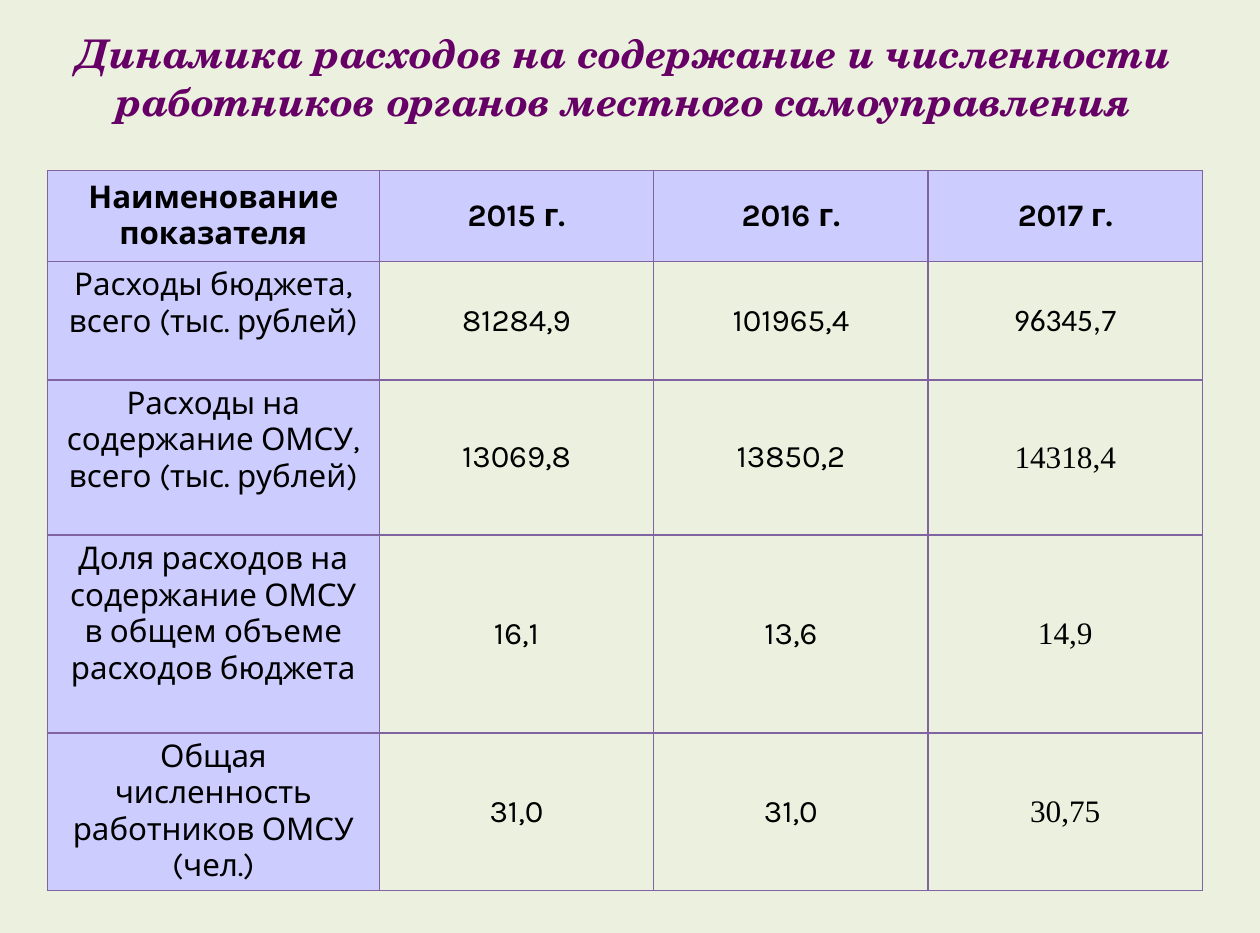
from pptx import Presentation
from pptx.dml.color import RGBColor
from pptx.enum import text
from pptx.oxml import parse_xml
from pptx.oxml import ns
from pptx.util import Pt

HEADING = "Динамика расходов на содержание и численности работников органов местного самоуправления"
INDICATORS = [
    ("Наименование показателя", "2015 г.", "2016 г.", "2017 г."),
    ("Расходы бюджета, всего (тыс. рублей)", "81284,9", "101965,4", "96345,7"),
    ("Расходы на содержание ОМСУ, всего (тыс. рублей)", "13069,8", "13850,2", "14318,4"),
    ("Доля расходов на содержание ОМСУ в общем объеме расходов бюджета", "16,1", "13,6", "14,9"),
    ("Общая численность работников ОМСУ (чел.)", "31,0", "31,0", "30,75"),
]
COLUMN_WIDTHS = [201.6, 166.7, 166.7, 166.7]
ROW_HEIGHTS = [55.3, 72, 94.3, 120.2, 88.6]
LAST_YEAR_FONTS = ["Karla", "Calibri"] + ["Times New Roman"] * 3
PAPER, LILAC, BORDER, PLUM, BLACK = "EBF1DE", "CCCCFF", "8064A2", "660066", "000000"


def color(value):
    return RGBColor.from_string(value)


def style(paragraph, font_name, size, font_color, bold, italic=False):
    paragraph.alignment = text.PP_ALIGN.CENTER
    font = paragraph.font
    font.name, font.size = font_name, Pt(size)
    font.bold, font.italic = bold, italic
    font.color.rgb = color(font_color)


def add_borders(cell):
    properties = cell._tc.get_or_add_tcPr()
    for position, side in enumerate(("lnL", "lnR", "lnT", "lnB")):
        properties.insert(position, parse_xml(
            f'<a:{side} {ns.nsdecls("a")} w="{Pt(1)}"><a:solidFill>'
            f'<a:srgbClr val="{BORDER}"/></a:solidFill></a:{side}>'))


deck = Presentation()
deck.slide_width, deck.slide_height = Pt(765.38), Pt(567)
slide = deck.slides.add_slide(deck.slide_layouts[5])
slide.background.fill.solid()
slide.background.fill.fore_color.rgb = color(PAPER)

heading = slide.shapes.title
heading.left, heading.top, heading.width, heading.height = Pt(34.6), Pt(13.4), Pt(689.2), Pt(66.2)
heading.text_frame.text = HEADING
heading.text_frame.vertical_anchor = text.MSO_ANCHOR.MIDDLE
style(heading.text_frame.paragraphs[0], "TeX Gyre Schola", 24, PLUM, True, True)

indicators = slide.shapes.add_table(
    len(INDICATORS), len(COLUMN_WIDTHS), Pt(28.8), Pt(103.6),
    Pt(sum(COLUMN_WIDTHS)), Pt(sum(ROW_HEIGHTS))).table
for column, width in zip(indicators.columns, COLUMN_WIDTHS):
    column.width = Pt(width)
for row, height in zip(indicators.rows, ROW_HEIGHTS):
    row.height = Pt(height)

for r, indicator in enumerate(INDICATORS):
    for c, entry in enumerate(indicator):
        cell = indicators.cell(r, c)
        cell.text = entry
        is_label = r > 0 and c == 0
        cell.vertical_anchor = text.MSO_ANCHOR.TOP if is_label else text.MSO_ANCHOR.MIDDLE
        cell.fill.solid()
        cell.fill.fore_color.rgb = color(LILAC if r == 0 or c == 0 else PAPER)
        font_name = LAST_YEAR_FONTS[r] if c == 3 else "Karla"
        style(cell.text_frame.paragraphs[0], font_name, 19, BLACK, r == 0)
        add_borders(cell)

deck.save("out.pptx")
